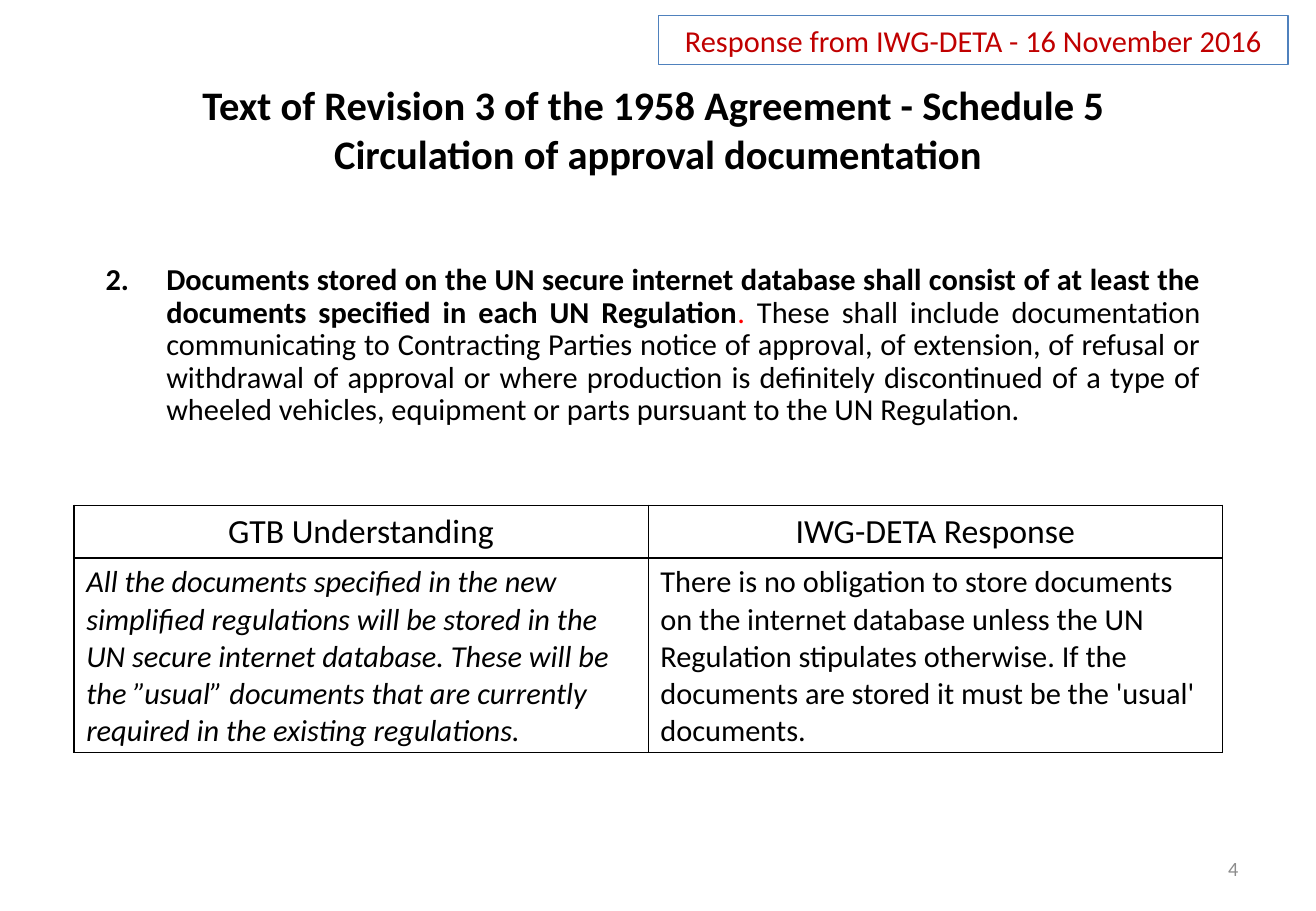
from lxml import etree
from pptx import Presentation
from pptx.dml.color import RGBColor
from pptx.enum.shapes import MSO_SHAPE
from pptx.enum.text import MSO_ANCHOR, PP_ALIGN
from pptx.oxml.ns import qn
from pptx.util import Inches, Pt

LEFT, CENTER, RIGHT, JUSTIFY = PP_ALIGN.LEFT, PP_ALIGN.CENTER, PP_ALIGN.RIGHT, PP_ALIGN.JUSTIFY
TOP, MIDDLE = MSO_ANCHOR.TOP, MSO_ANCHOR.MIDDLE
RECTANGLE = MSO_SHAPE.RECTANGLE
COLORS = {"black": "000000", "red": "FF0000", "dark_red": "C00000",
          "blue": "4F81BD", "gray": "8C8C8C"}
FONT = "Calibri"

# Content: runs are (text, color, format values)
TITLE = ["Text of Revision 3 of the 1958 Agreement - Schedule 5 ",
         "Circulation of approval documentation"]
CLAUSE_NUMBER = 2
CLAUSE = [
    ("Documents stored on the UN secure internet database shall consist of at least the "
     "documents specified in each UN Regulation", "black", {"bold": True}),
    (". ", "red", {}),
    ("These shall include documentation communicating to Contracting Parties notice of approval, "
     "of extension, of refusal or withdrawal of approval or where production is definitely "
     "discontinued of a type of wheeled vehicles, equipment or parts pursuant to the UN "
     "Regulation.", "black", {}),
]
HEADERS = ["GTB Understanding", "IWG-DETA Response"]
ANSWERS = [
    ("All the documents specified in the new simplified regulations will be stored in the UN "
     "secure internet database. These will be the ”usual” documents that are currently required "
     "in the existing regulations.", {"italic": True}),
    ("There is no obligation to store documents on the internet database unless the UN "
     "Regulation stipulates otherwise. If the documents are stored it must be the 'usual' "
     "documents.", {}),
]
RESPONSE = "Response from IWG-DETA - 16 November 2016"
PAGE = "4"

# Places: left, top, width, height
TITLE_BOX = (0, 0.61, 10.83, 0.91)
CLAUSE_BOX = (0.77, 2.13, 9.21, 1.43)
TABLE_BOX = (0.61, 4.16, 9.45, 2.03)
RESPONSE_BOX = (5.42, 0.13, 5.18, 0.4)
PAGE_BOX = (7.76, 6.95, 2.53, 0.4)
HEADER_HEIGHT = 0.43


def color(name):
    return RGBColor.from_string(COLORS[name])


def add_runs(paragraph, runs, size, align):
    paragraph.alignment = align
    for text, color_name, extra in runs:
        run = paragraph.add_run()
        run.text = text
        values = {"name": FONT, "size": Pt(size), "bold": False, "italic": False, **extra}
        for key, value in values.items():
            setattr(run.font, key, value)
        run.font.color.rgb = color(color_name)


def prepare_frame(shape, anchor=TOP):
    frame = shape.text_frame
    frame.word_wrap = True
    frame.vertical_anchor = anchor
    return frame


def add_text_box(slide, box, anchor=TOP):
    return prepare_frame(slide.shapes.add_textbox(*map(Inches, box)), anchor)


def set_borders(cell):
    properties = cell._tc.get_or_add_tcPr()
    for index, side in enumerate(("lnL", "lnR", "lnT", "lnB")):
        line = etree.Element(qn(f"a:{side}"), w=str(Pt(1)))
        fill = etree.SubElement(line, qn("a:solidFill"))
        etree.SubElement(fill, qn("a:srgbClr"), val=COLORS["black"])
        properties.insert(index, line)


def fill_cell(cell, text, size, align, extra):
    cell.fill.background()
    add_runs(cell.text_frame.paragraphs[0], [(text, "black", extra)], size, align)
    set_borders(cell)


def main():
    presentation = Presentation()
    presentation.slide_width, presentation.slide_height = Inches(10.83), Inches(7.5)
    slide = presentation.slides.add_slide(presentation.slide_layouts[6])

    # Title
    frame = add_text_box(slide, TITLE_BOX)
    for index, text in enumerate(TITLE):
        paragraph = frame.add_paragraph() if index else frame.paragraphs[0]
        add_runs(paragraph, [(text, "black", {"bold": True})], 24, CENTER)

    # Numbered clause
    paragraph = add_text_box(slide, CLAUSE_BOX).paragraphs[0]
    properties = paragraph._p.get_or_add_pPr()
    properties.set("marL", str(Inches(0.5)))
    properties.set("indent", str(Inches(-0.5)))
    etree.SubElement(properties, qn("a:buAutoNum"), type="arabicPeriod",
                     startAt=str(CLAUSE_NUMBER))
    paragraph.line_spacing = Pt(19.2)
    paragraph.space_after = Pt(6)
    add_runs(paragraph, CLAUSE, 18, JUSTIFY)

    # Comparison table
    table = slide.shapes.add_table(2, len(HEADERS), *map(Inches, TABLE_BOX)).table
    table.first_row = table.horz_banding = False
    table.rows[0].height = Inches(HEADER_HEIGHT)
    table.rows[1].height = Inches(TABLE_BOX[3] - HEADER_HEIGHT)
    for column, (header, (answer, extra)) in enumerate(zip(HEADERS, ANSWERS)):
        fill_cell(table.cell(0, column), header, 20, CENTER, {})
        fill_cell(table.cell(1, column), answer, 18, LEFT, extra)

    # Response label
    label = slide.shapes.add_shape(RECTANGLE, *map(Inches, RESPONSE_BOX))
    label.shadow.inherit = False
    label.fill.background()
    label.line.color.rgb = color("blue")
    label.line.width = Pt(0.75)
    add_runs(prepare_frame(label).paragraphs[0], [(RESPONSE, "dark_red", {})], 18, CENTER)

    # Page number
    frame = add_text_box(slide, PAGE_BOX, MIDDLE)
    add_runs(frame.paragraphs[0], [(PAGE, "gray", {})], 12, RIGHT)

    presentation.save("out.pptx")


if __name__ == "__main__":
    main()
